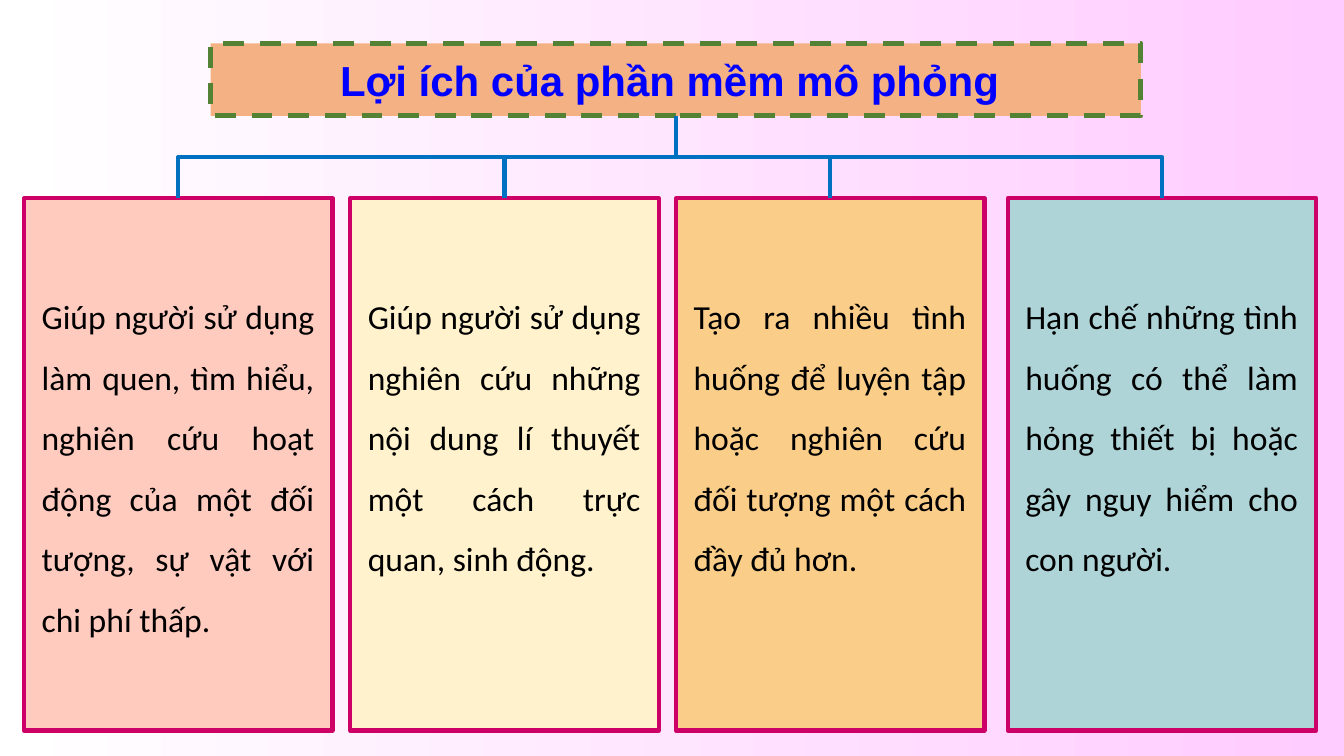
"""Builds a slide on the four benefits of simulation software."""
import dataclasses

import pptx
import pptx.dml.color
import pptx.enum.dml
import pptx.enum.shapes
import pptx.enum.text
import pptx.oxml.ns
import pptx.util
from lxml import etree

Cm = pptx.util.Cm
Pt = pptx.util.Pt
rgb = pptx.dml.color.RGBColor.from_string


@dataclasses.dataclass(frozen=True)
class Theme:
    heading_font: str = "Arial"
    body_font: str = "Calibri"
    heading_size: float = 30
    body_size: float = 24
    heading_text: str = "0000FF"
    heading_fill: str = "F4B183"
    heading_line: str = "548235"
    body_text: str = "000000"
    card_line: str = "CC0066"
    branch_line: str = "0070C0"
    background: tuple = ("FFFFFF", "FFCCFF")


theme = Theme()


def paint(shape, fill, line, width):
    shape.fill.solid()
    shape.fill.fore_color.rgb = rgb(fill)
    shape.line.color.rgb = rgb(line)
    shape.line.width = Pt(width)


def style_text(paragraph, font_name, size, color, align):
    paragraph.alignment = align
    for run in paragraph.runs:
        run.font.name = font_name
        run.font.size = Pt(size)
        run.font.color.rgb = rgb(color)


presentation = pptx.Presentation()
presentation.slide_width = Cm(33.87)
presentation.slide_height = Cm(19.05)
slide = presentation.slides.add_slide(presentation.slide_layouts[5])

backdrop = slide.background.fill
backdrop.gradient()
backdrop.gradient_angle = 0
for stop, color in zip(backdrop.gradient_stops, theme.background):
    stop.color.rgb = rgb(color)

heading = slide.shapes.title
heading.left, heading.top, heading.width, heading.height = Cm(5.31), Cm(1.09), Cm(23.44), Cm(1.83)
paint(heading, theme.heading_fill, theme.heading_line, 3.75)
heading.line.dash_style = pptx.enum.dml.MSO_LINE.DASH
heading.text_frame.text = "Lợi ích của phần mềm mô phỏng "
heading.text_frame.auto_size = pptx.enum.text.MSO_AUTO_SIZE.NONE
heading.text_frame.vertical_anchor = pptx.enum.text.MSO_ANCHOR.MIDDLE
heading_line = heading.text_frame.paragraphs[0]
style_text(heading_line, theme.heading_font, theme.heading_size, theme.heading_text,
           pptx.enum.text.PP_ALIGN.CENTER)
heading_line.runs[0].font.bold = True

benefits = [
    (0.61, 11.02, "FFCBBF", "Giúp người sử dụng làm quen, tìm hiểu, nghiên cứu hoạt động của một đối tượng, sự vật với chi phí thấp."),
    (8.83, 9.5, "FFF2CC", "Giúp người sử dụng nghiên cứu những nội dung lí thuyết một cách trực quan, sinh động."),
    (17.04, 9.5, "FACD89", "Tạo ra nhiều tình huống để luyện tập hoặc nghiên cứu đối tượng một cách đầy đủ hơn."),
    (25.4, 9.5, "AED4D7", "Hạn chế những tình huống có thể làm hỏng thiết bị hoặc gây nguy hiểm cho con người."),
]
card_top, card_width, card_height = Cm(5), Cm(7.77), Cm(13.41)

for left, text_height, fill, wording in benefits:
    benefit = slide.shapes.add_group_shape()
    card = benefit.shapes.add_shape(pptx.enum.shapes.MSO_SHAPE.RECTANGLE,
                                    Cm(left), card_top, card_width, card_height)
    card.shadow.inherit = False
    paint(card, fill, theme.card_line, 3)
    explanation = benefit.shapes.add_textbox(Cm(left + 0.19), Cm(6.83), Cm(7.37), Cm(text_height))
    explanation.text_frame.word_wrap = True
    explanation.text_frame.auto_size = pptx.enum.text.MSO_AUTO_SIZE.SHAPE_TO_FIT_TEXT
    explanation.text_frame.text = wording
    sentence = explanation.text_frame.paragraphs[0]
    sentence.line_spacing = 1.5
    style_text(sentence, theme.body_font, theme.body_size, theme.body_text,
               pptx.enum.text.PP_ALIGN.JUSTIFY)

trunk_x = heading.left + heading.width // 2
trunk_y = heading.top + heading.height
drop = card_top - trunk_y
middle_y = trunk_y + drop // 2

for left, *_ in benefits:
    reach = Cm(left) + card_width // 2 - trunk_x
    middle_x = trunk_x + reach // 2
    side = 1 if reach > 0 else -1
    branch = slide.shapes.add_connector(
        pptx.enum.shapes.MSO_CONNECTOR.ELBOW,
        middle_x + side * drop // 2, middle_y - abs(reach) // 2,
        middle_x - side * drop // 2, middle_y + abs(reach) // 2)
    branch.line.color.rgb = rgb(theme.branch_line)
    branch.line.width = Pt(3)
    properties = branch._element.spPr
    quarter_turns = 3 if reach > 0 else 1
    properties.find(pptx.oxml.ns.qn("a:xfrm")).set("rot", str(quarter_turns * 90 * 60000))
    etree.SubElement(properties, pptx.oxml.ns.qn("a:effectLst"))

presentation.save("out.pptx")
